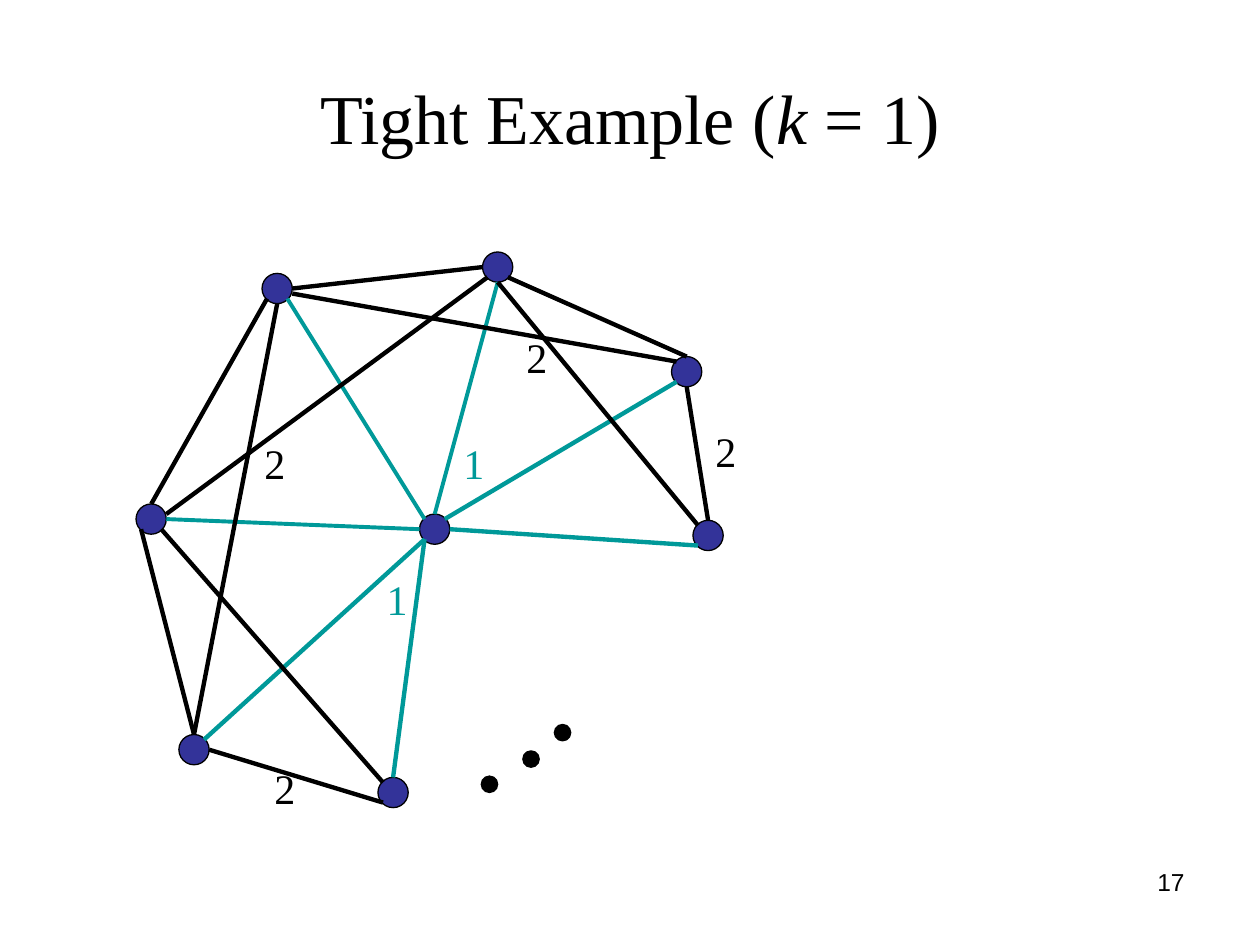
from dataclasses import dataclass

from lxml import etree
from pptx import Presentation
from pptx import util as u
from pptx.dml.color import RGBColor
from pptx.enum import shapes, text
from pptx.oxml import ns

PX = 9144


@dataclass(frozen=True)
class Theme:
    ink: str = "000000"
    node: str = "333399"
    spoke: str = "009999"
    serif: str = "Times New Roman"
    sans: str = "Arial"
    title_size: int = 40
    label_size: int = 24
    number_size: int = 14
    outline: float = 0.75
    rim_width: float = 2.5


THEME = Theme()
NODE_SIZE = 24
DOT_SIZE = 13
LABEL_SIZE = (37, 50)
GRAPH_BOX = (108, 200, 487, 450)
ANCHORS = {
    "N": (0, -12), "NE": (8, -8), "E": (12, 0), "SE": (8, 8),
    "S": (0, 12), "SW": (-8, 8), "W": (-12, 0), "NW": (-8, -8),
    "ENE": (12, -4), "ESE": (12, 4),
}
NODES = {
    "hub": (237, 220), "left": (12, 212), "upper_left": (112, 29),
    "top": (287, 12), "upper_right": (437, 95), "right": (454, 225),
    "lower_left": (46, 395), "bottom": (204, 429),
}
SPOKES = [
    ("hub", "SW", "lower_left", "NE", 2.5),
    ("hub", "N", "top", "S", 2.25),
    ("hub", "NE", "upper_right", "SW", 2.5),
    ("hub", "NW", "upper_left", "SE", 2.25),
    ("hub", "W", "left", "E", 2.25),
    ("hub", "E", "right", "SW", 2.5),
    ("bottom", "N", "hub", "SW", 2.5),
]
RIM = [
    ("top", "W", "upper_left", "E"),
    ("upper_right", "N", "top", "SE"),
    ("left", "SW", "lower_left", "N"),
    ("upper_left", "SW", "left", "N"),
    ("right", "N", "upper_right", "S"),
    ("lower_left", "E", "bottom", "SW"),
    ("left", "SE", "bottom", "NW"),
    ("lower_left", "N", "upper_left", "S"),
    ("left", "ENE", "top", "SW"),
    ("upper_left", "ESE", "upper_right", "NW"),
    ("top", "S", "right", "NW"),
]
LABELS = [
    ("2", 92, 142, THEME.ink), ("2", 300, 58, THEME.ink),
    ("2", 100, 400, THEME.ink), ("2", 450, 133, THEME.ink),
    ("1", 250, 142, THEME.spoke), ("1", 189, 250, THEME.spoke),
]
DOTS = [(274, 416), (307, 396), (332, 375)]


def emu(*lengths):
    return [u.Emu(length * PX) for length in lengths]


def color(value):
    return RGBColor.from_string(value)


def add_run(paragraph, words, size, font, ink, italic=False):
    run = paragraph.add_run()
    run.text = words
    run.font.size = u.Pt(size)
    run.font.name = font
    run.font.italic = italic
    run.font.color.rgb = color(ink)


def add_text(slide, box, words, size, font, ink, align, wrap):
    shape = slide.shapes.add_textbox(*emu(*box))
    shape.text_frame.word_wrap = wrap
    paragraph = shape.text_frame.paragraphs[0]
    paragraph.alignment = align
    add_run(paragraph, words, size, font, ink)


def add_circle(slide, x, y, size, fill):
    shape = slide.shapes.add_shape(
        shapes.MSO_SHAPE.OVAL, *emu(x, y, size, size))
    shape.shadow.inherit = False
    shape.fill.solid()
    shape.fill.fore_color.rgb = color(fill)
    shape.line.color.rgb = color(THEME.ink)
    shape.line.width = u.Pt(THEME.outline)


def add_edge(slide, start, end, ink, width):
    connector = slide.shapes.add_connector(
        shapes.MSO_CONNECTOR.STRAIGHT, *emu(*start, *end))
    connector.line.color.rgb = color(ink)
    connector.line.width = u.Pt(width)
    etree.SubElement(connector._element.spPr, ns.qn("a:effectLst"))


def place_title(slide, box):
    title = slide.shapes.title
    title.left, title.top, title.width, title.height = emu(*box)
    title.text_frame.vertical_anchor = text.MSO_ANCHOR.MIDDLE
    paragraph = title.text_frame.paragraphs[0]
    paragraph.alignment = text.PP_ALIGN.CENTER
    for words, italic in (("Tight Example (", False), ("k ", True), ("= 1)", False)):
        add_run(paragraph, words, THEME.title_size, THEME.serif, THEME.ink, italic)


def place_graph(slide, box):
    left, top = box[:2]

    def endpoint(node, side):
        x, y = NODES[node]
        dx, dy = ANCHORS[side]
        return left + x + dx, top + y + dy

    for x, y in NODES.values():
        half = NODE_SIZE // 2
        add_circle(slide, left + x - half, top + y - half, NODE_SIZE, THEME.node)
    edges = [(*spoke[:4], THEME.spoke, spoke[4]) for spoke in SPOKES]
    edges += [(*edge, THEME.ink, THEME.rim_width) for edge in RIM]
    for first, first_side, second, second_side, ink, width in edges:
        add_edge(slide, endpoint(first, first_side),
                 endpoint(second, second_side), ink, width)
    for words, x, y, ink in LABELS:
        add_text(slide, (left + x, top + y, *LABEL_SIZE), words,
                 THEME.label_size, THEME.serif, ink, text.PP_ALIGN.LEFT, False)
    for x, y in DOTS:
        add_circle(slide, left + x, top + y, DOT_SIZE, THEME.ink)


def place_number(slide, box):
    add_text(slide, box, "17", THEME.number_size, THEME.sans, THEME.ink,
             text.PP_ALIGN.RIGHT, True)


def main():
    presentation = Presentation()
    presentation.slide_width, presentation.slide_height = emu(1000, 750)
    slide = presentation.slides.add_slide(presentation.slide_layouts[5])
    place_title(slide, (50, 30, 900, 125))
    place_graph(slide, GRAPH_BOX)
    place_number(slide, (717, 683, 233, 52))
    presentation.save("out.pptx")


if __name__ == "__main__":
    main()
